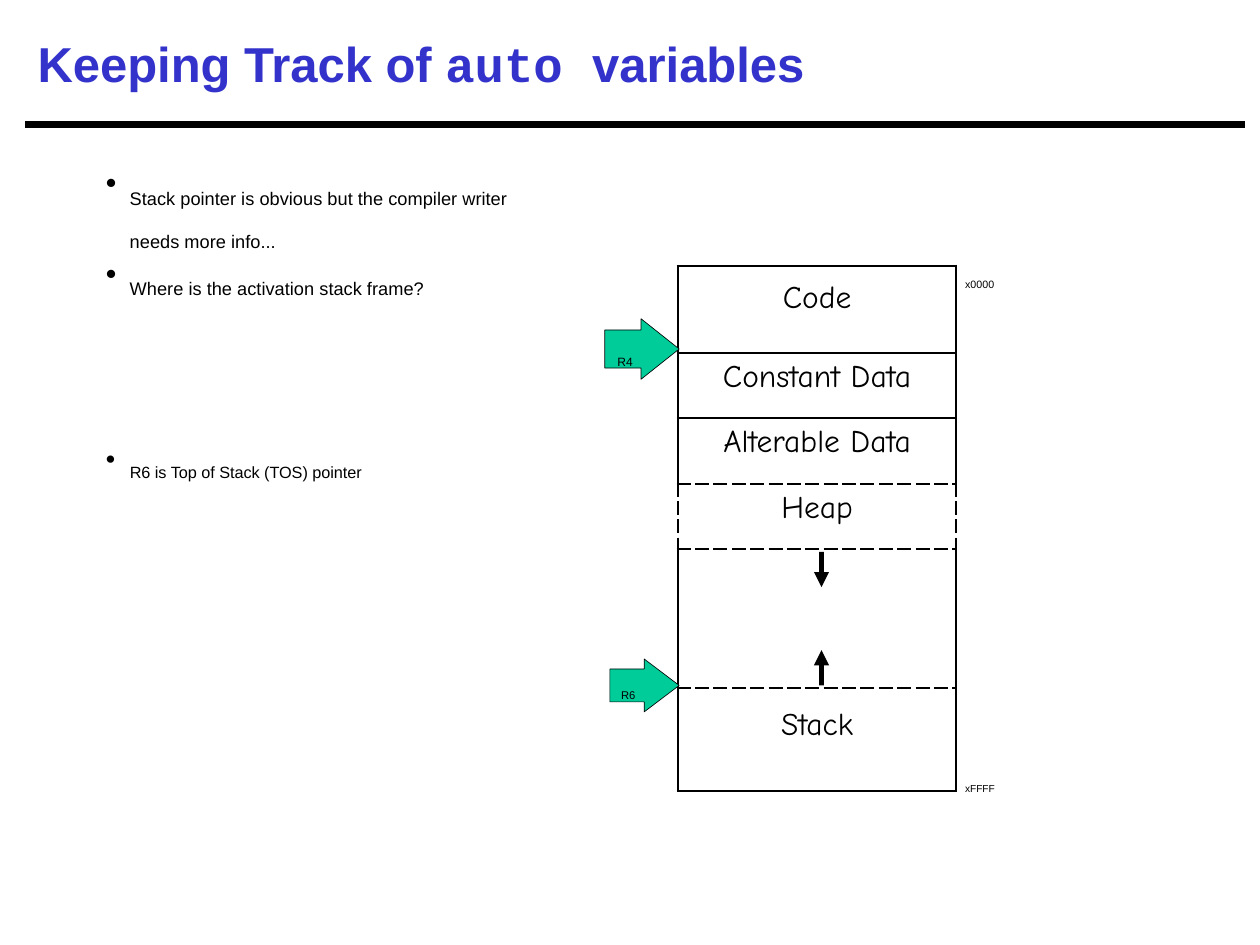
from lxml.etree import SubElement
from pptx import Presentation
from pptx.dml.color import RGBColor
from pptx.enum.shapes import MSO_CONNECTOR, MSO_SHAPE
from pptx.enum.text import MSO_ANCHOR, PP_ALIGN
from pptx.oxml import parse_xml
from pptx.oxml.ns import nsdecls, qn
from pptx.util import Inches, Pt

BLACK = RGBColor(0, 0, 0)
BLUE = RGBColor(0x33, 0x33, 0xCC)
GREEN = RGBColor(0x00, 0xCC, 0x99)

TITLE = [("Keeping Track of ", "Arial"), ("auto ", "Courier New"), ("variables", "Arial")]

# Box (left, top, width, height), size, then (text, line spacing, space before)
BULLET_BOXES = [
    ((0.83, 1.31, 3.5, 1.55), 18, [
        ("Stack pointer is obvious but the compiler writer needs more info...", 0.99, 1.1),
        ("Where is the activation stack frame?", 1.03, 2.2),
    ]),
    ((0.83, 3.5, 3.32, 0.54), 16, [("R6 is Top of Stack (TOS) pointer", 1.03, 0.5)]),
]

LABELS = [
    ("x0000", (7.66, 2.1, 0.8, 0.19), 10.5),
    ("xFFFF", (7.66, 6.11, 0.57, 0.18), 10),
    ("R4", (4.9, 2.69, 0.3, 0.22), 12),
    ("R6", (4.93, 5.35, 0.24, 0.2), 11),
]

# Text, row height, top margin
MEMORY_LEFT, MEMORY_TOP, MEMORY_WIDTH = 5.38, 2.11, 2.21
MEMORY = [
    ("Code", 0.69, 0.11),
    ("Constant Data", 0.52, 0.05),
    ("Alterable Data", 0.52, 0.05),
    ("Heap", 0.52, 0.05),
    ("", 1.1, 0.05),
    ("Stack", 0.82, 0.15),
]
HEAP_ROW = 3
DASHED_EDGES = {3, 4, 5}  # horizontal edges, counted from the top of the table

# Shape, box, fill, outline width, shaft and head proportions
ARROWS = [
    (MSO_SHAPE.UP_ARROW, (6.46, 5.16, 0.12, 0.28), BLACK, None, (0.33, 1)),
    (MSO_SHAPE.DOWN_ARROW, (6.46, 4.38, 0.12, 0.28), BLACK, None, (0.33, 1)),
    (MSO_SHAPE.RIGHT_ARROW, (4.8, 2.53, 0.59, 0.48), GREEN, 0.37, (0.63, 0.63)),
    (MSO_SHAPE.RIGHT_ARROW, (4.84, 5.23, 0.55, 0.42), GREEN, 0.37, (0.62, 0.66)),
]


def inches(box):
    return [Inches(value) for value in box]


def style(run, size, font="Arial", color=BLACK, lowered=False):
    """Format a run; a lowered run is set as a subscript."""
    run.font.size = Pt(size)
    run.font.name = font
    run.font.color.rgb = color
    if lowered:
        run.font._element.set("baseline", "-25000")


def add_text_frame(slide, box):
    frame = slide.shapes.add_textbox(*inches(box)).text_frame
    frame.word_wrap = True
    frame.margin_left = frame.margin_right = frame.margin_bottom = 0
    frame.margin_top = Inches(0.01)
    return frame


def add_title(slide):
    frame = slide.shapes.add_textbox(*inches((0.2, 0.08, 9.67, 0.84))).text_frame
    frame.word_wrap = True
    frame.vertical_anchor = MSO_ANCHOR.MIDDLE
    for text, font in TITLE:
        run = frame.paragraphs[0].add_run()
        run.text = text
        style(run, 28, font, BLUE)
        run.font.bold = True

    rule = slide.shapes.add_connector(
        MSO_CONNECTOR.STRAIGHT, *inches((0.2, 0.99, 9.88, 0.99)))
    rule.line.color.rgb = BLACK
    rule.line.width = Pt(3.75)
    SubElement(rule._element.spPr, qn("a:effectLst"))


def add_bullets(slide, box, size, items):
    frame = add_text_frame(slide, box)
    frame.text = "\n".join(text for text, _, _ in items)
    for paragraph, (_, spacing, before) in zip(frame.paragraphs, items):
        paragraph.line_spacing = spacing
        paragraph.space_before = Pt(before)
        properties = paragraph._p.get_or_add_pPr()
        properties.set("marL", str(Inches(0.2)))
        properties.set("indent", str(Inches(-0.19)))
        SubElement(properties, qn("a:buChar")).set("char", "•")
        style(paragraph.runs[0], size, lowered=True)


def add_label(slide, text, box, size):
    paragraph = add_text_frame(slide, box).paragraphs[0]
    paragraph.text = text
    paragraph.space_before = Pt(1)
    style(paragraph.runs[0], size, lowered=True)


def set_borders(cell, dashes):
    """Draw the four cell borders; dashes maps each side to True or False."""
    properties = cell._tc.get_or_add_tcPr()
    for position, side in enumerate("LRTB"):
        dash = "sysDash" if dashes[side] else "solid"
        properties.insert(position, parse_xml(
            f'<a:ln{side} {nsdecls("a")} w="{Pt(1.5)}"><a:solidFill>'
            f'<a:srgbClr val="{BLACK}"/></a:solidFill>'
            f'<a:prstDash val="{dash}"/></a:ln{side}>'))


def add_memory_map(slide):
    height = sum(row_height for _, row_height, _ in MEMORY)
    table = slide.shapes.add_table(
        len(MEMORY), 1, *inches((MEMORY_LEFT, MEMORY_TOP, MEMORY_WIDTH, height))).table
    table.first_row = table.horz_banding = False
    for index, (text, row_height, margin) in enumerate(MEMORY):
        table.rows[index].height = Inches(row_height)
        cell = table.cell(index, 0)
        cell.fill.background()
        cell.margin_left = cell.margin_right = cell.margin_bottom = 0
        cell.margin_top = Inches(margin)
        sides = index == HEAP_ROW
        set_borders(cell, {"L": sides, "R": sides,
                           "T": index in DASHED_EDGES, "B": index + 1 in DASHED_EDGES})
        if text:
            paragraph = cell.text_frame.paragraphs[0]
            paragraph.text = text
            paragraph.alignment = PP_ALIGN.CENTER
            style(paragraph.runs[0], 18, "Comic Neue")


def add_arrow(slide, kind, box, color, outline, proportions):
    arrow = slide.shapes.add_shape(kind, *inches(box))
    arrow.shadow.inherit = False
    arrow.adjustments[0], arrow.adjustments[1] = proportions
    arrow.fill.solid()
    arrow.fill.fore_color.rgb = color
    if outline:
        arrow.line.color.rgb = BLACK
        arrow.line.width = Pt(outline)
    else:
        arrow.line.fill.background()


def main():
    presentation = Presentation()
    presentation.slide_width, presentation.slide_height = Inches(10), Inches(7.5)
    slide = presentation.slides.add_slide(presentation.slide_layouts[6])
    add_title(slide)
    for bullet_box in BULLET_BOXES:
        add_bullets(slide, *bullet_box)
    add_memory_map(slide)
    for arrow in ARROWS:
        add_arrow(slide, *arrow)
    for label in LABELS:
        add_label(slide, *label)
    presentation.save("out.pptx")


if __name__ == "__main__":
    main()
